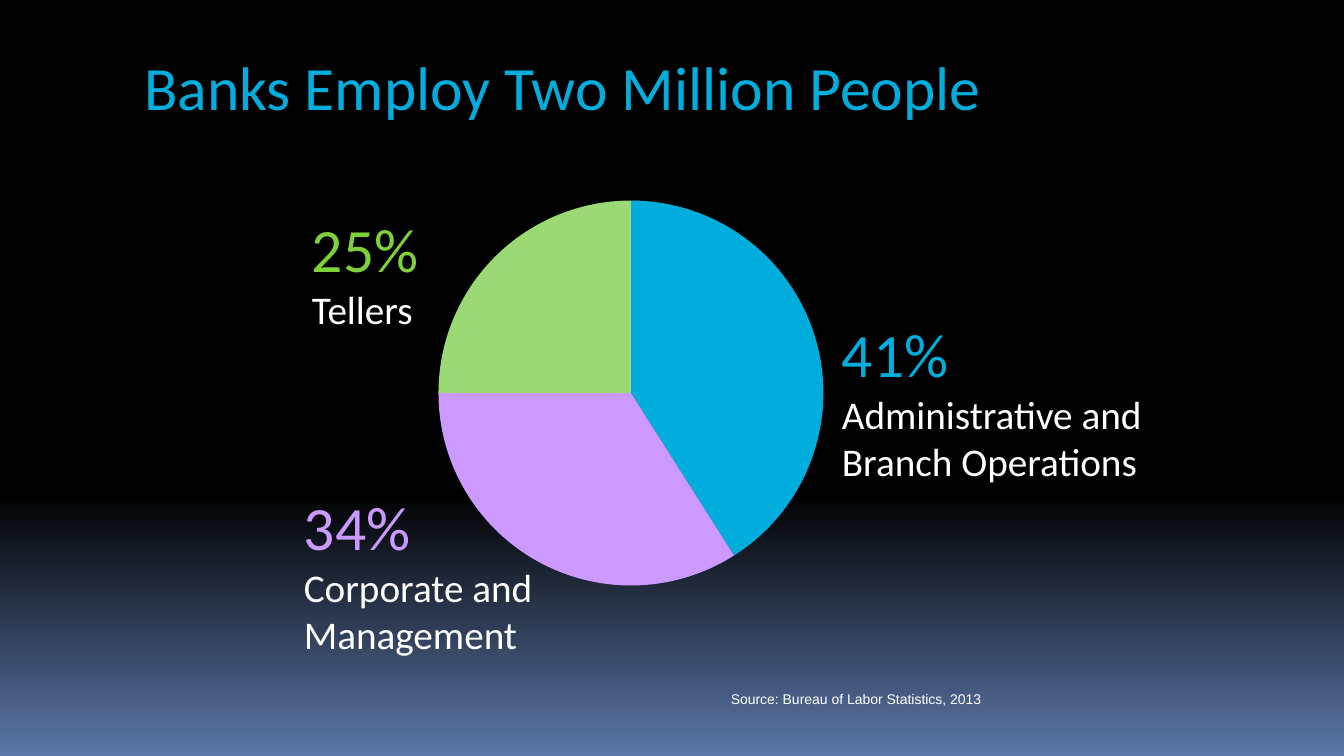
from copy import deepcopy

from pptx import Presentation
from pptx.chart.data import CategoryChartData
from pptx.dml.color import RGBColor
from pptx.enum.chart import XL_CHART_TYPE
from pptx.enum.text import MSO_ANCHOR, MSO_AUTO_SIZE, PP_ALIGN
from pptx.oxml.ns import qn
from pptx.util import Emu, Pt

PIE = XL_CHART_TYPE.PIE
TOP = MSO_ANCHOR.TOP
NO_FIT = MSO_AUTO_SIZE.NONE
LEFT, RIGHT = PP_ALIGN.LEFT, PP_ALIGN.RIGHT

SLIDE_WIDTH, SLIDE_HEIGHT = 1344, 756
EMU_PER_PX = 12192000 / SLIDE_WIDTH
TITLE_ONLY = 5

BLACK, STEEL, WHITE = "000000", "5B77A8", "FFFFFF"
BLUE, PURPLE, GREEN, PALE_GREEN = "00ADDC", "CC99FF", "7FD13B", "9BD974"

# Share, slice colour, figure colour, label lines, label box
JOBS = [
    (41, BLUE, BLUE, ["Administrative and", "Branch Operations"], (832, 311, 378, 180)),
    (34, PURPLE, PURPLE, ["Corporate and Management"], (294, 484, 252, 180)),
    (25, PALE_GREEN, GREEN, ["Tellers"], (302, 206, 176, 132)),
]


def px(length):
    return Emu(round(length * EMU_PER_PX))


def color(value):
    return RGBColor.from_string(value)


def add_run(para, text, size, value, font="Calibri"):
    run = para.add_run()
    run.text = text
    run.font.size = Pt(size)
    run.font.name = font
    run.font.color.rgb = color(value)


def add_text(page, box, lines, align=LEFT):
    """Place one paragraph for each (text, size, colour, font) line."""
    frame = page.shapes.add_textbox(*map(px, box)).text_frame
    frame.word_wrap = True
    for index, line in enumerate(lines):
        para = frame.add_paragraph() if index else frame.paragraphs[0]
        para.alignment = align
        add_run(para, *line)


def paint_background(page):
    fill = page.background.fill
    fill.gradient()
    fill.gradient_angle = 270
    stop_list = next(page.element.iter(qn("a:gsLst")))
    stop_list.append(deepcopy(stop_list[-1]))
    stops = [(0, BLACK), (0.65, BLACK), (1, STEEL)]
    for stop, (position, value) in zip(fill.gradient_stops, stops):
        stop.position = position
        stop.color.rgb = color(value)


def add_title(page, box, text):
    title = page.shapes.title
    title.left, title.top, title.width, title.height = map(px, box)
    frame = title.text_frame
    frame.word_wrap = True
    frame.auto_size = NO_FIT
    frame.vertical_anchor = TOP
    para = frame.paragraphs[0]
    para.alignment = LEFT
    para.line_spacing = Pt(44)
    add_run(para, text, 44, BLUE)


def fix_plot_area(chart, x, y, width, height):
    """Pin the plot to fractions of the chart box."""
    plot_area = next(chart.element.iter(qn("c:plotArea")))
    layout = plot_area.find(qn("c:layout"))
    if layout is None:
        layout = plot_area.makeelement(qn("c:layout"), {})
        plot_area.insert(0, layout)
    manual = layout.makeelement(qn("c:manualLayout"), {})
    layout.append(manual)
    settings = [("layoutTarget", "inner"), ("xMode", "edge"), ("yMode", "edge"),
                ("x", x), ("y", y), ("w", width), ("h", height)]
    for name, value in settings:
        manual.append(manual.makeelement(qn("c:" + name), {"val": str(value)}))


def add_pie(page, box):
    data = CategoryChartData()
    data.categories = [str(number) for number in range(1, len(JOBS) + 1)]
    data.add_series("Series 1", [job[0] for job in JOBS])
    chart = page.shapes.add_chart(PIE, *map(px, box), data).chart
    chart.has_title = False
    chart.has_legend = False
    chart.font.name = "Arial"
    chart.font.size = Pt(18)
    chart.font.color.rgb = color(WHITE)
    plot = chart.plots[0]
    plot.vary_by_categories = True
    for index, job in enumerate(JOBS):
        slice_format = plot.series[0].points[index].format
        slice_format.fill.solid()
        slice_format.fill.fore_color.rgb = color(job[1])
        slice_format.line.fill.background()
    fix_plot_area(chart, 0.19, 0.04, 0.62, 0.93)


def add_labels(page):
    for share, _, figure_color, label, box in JOBS:
        lines = [(f"{share}%", 44, figure_color)]
        lines += [(text, 28, WHITE) for text in label]
        add_text(page, box, lines)


def build_jobs_slide(deck):
    page = deck.slides.add_slide(deck.slide_layouts[TITLE_ONLY])
    paint_background(page)
    add_pie(page, (320, 184, 622, 414))
    add_title(page, (134, 56, 1142, 101), "Banks Employ Two Million People")
    source = ("Source: Bureau of Labor Statistics, 2013", 10, WHITE, "Arial")
    add_text(page, (386, 686, 605, 27), [source], RIGHT)
    add_labels(page)


def main():
    deck = Presentation()
    deck.slide_width, deck.slide_height = px(SLIDE_WIDTH), px(SLIDE_HEIGHT)
    build_jobs_slide(deck)
    deck.save("out.pptx")


if __name__ == "__main__":
    main()
